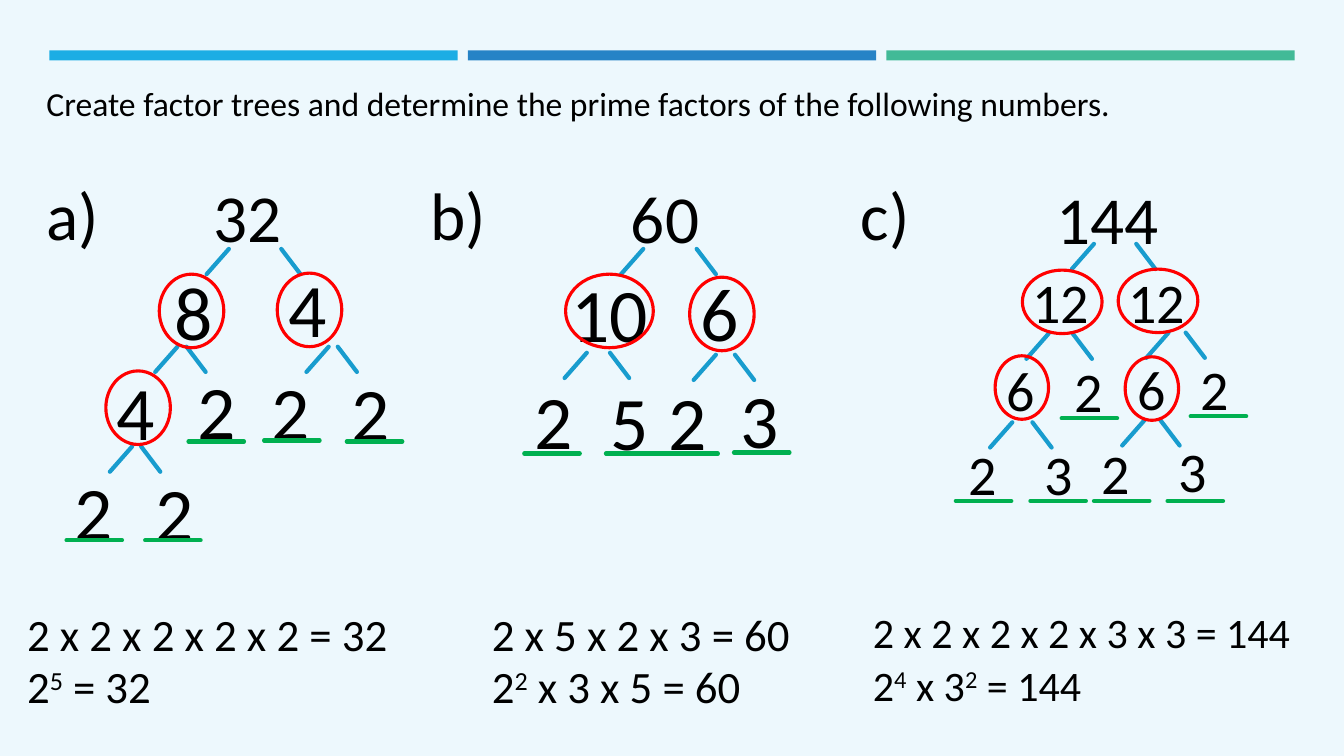
from dataclasses import dataclass
from typing import Optional

from lxml.etree import SubElement
from pptx import Presentation
from pptx.dml.color import RGBColor
from pptx.enum.shapes import MSO_CONNECTOR as CONN, MSO_SHAPE as SHAPE
from pptx.enum.text import MSO_ANCHOR as ANCHOR, PP_ALIGN as ALIGN
from pptx.oxml.ns import qn
from pptx.util import Inches, Pt


@dataclass(frozen=True)
class Theme:
    font: str = "Calibri"
    background: str = "EDF8FD"
    text: str = "000000"
    bars: tuple[str, ...] = ("1CADE4", "2683C6", "42BA97")
    branch: str = "189CCE"
    prime: str = "00B050"
    ring: str = "FF0000"
    title_pt: float = 24
    root_pt: float = 48
    line_pt: float = 3
    ring_pt: float = 2.25


@dataclass(frozen=True)
class Label:
    text: str
    x: float
    y: float


@dataclass(frozen=True)
class Fork:
    left: float
    right: float
    y: float


@dataclass(frozen=True)
class Composite:
    label: Label
    ring_x: float
    ring_y: float
    ring_w: Optional[float] = None


@dataclass(frozen=True)
class Prime:
    label: Label
    line_x: float
    line_y: float


@dataclass(frozen=True)
class Tree:
    """One exercise; '^' in the answers raises the digit after it."""
    letter: Label
    root: Label
    factor_pt: float
    ring_size: tuple[float, float]
    forks: tuple[Fork, ...]
    composites: tuple[Composite, ...]
    primes: tuple[Prime, ...]
    answer_x: float
    answer_pt: float
    answers: tuple[str, str]


THEME = Theme()
BRANCH_LEFT, BRANCH_RIGHT, BRANCH_DROP = 0.22, 0.19, 0.25
UNDERLINE_W = 0.55
ANSWER_Y, ANSWER_STEP = 5.97, 0.52

TREES = (
    Tree(
        Label("a)", 0.36, 1.67), Label("32", 2.02, 1.69), 54, (0.64, 0.73),
        (Fork(2.27, 2.79, 2.47), Fork(1.76, 1.85, 3.44),
         Fork(1.31, 1.4, 4.43), Fork(3.26, 3.35, 3.44)),
        (Composite(Label("8", 1.63, 2.58), 1.58, 2.72),
         Composite(Label("4", 2.76, 2.55), 2.75, 2.71),
         Composite(Label("4", 1.06, 3.57), 1.05, 3.68)),
        (Prime(Label("2", 1.86, 3.56), 1.87, 4.38),
         Prime(Label("2", 2.59, 3.57), 2.62, 4.37),
         Prime(Label("2", 3.39, 3.58), 3.44, 4.38),
         Prime(Label("2", 0.64, 4.56), 0.66, 5.36),
         Prime(Label("2", 1.44, 4.57), 1.44, 5.36)),
        0.17, 32, ("2 x 2 x 2 x 2 x 2 = 32", "2^5 = 32"),
    ),
    Tree(
        Label("b)", 4.17, 1.67), Label("60", 6.16, 1.7), 54, (0.64, 0.73),
        (Fork(6.38, 6.91, 2.47), Fork(5.82, 6.05, 3.5), Fork(7.1, 7.29, 3.52)),
        (Composite(Label("10", 5.57, 2.6), 5.61, 2.72, 0.87),
         Composite(Label("6", 6.85, 2.59), 6.84, 2.75)),
        (Prime(Label("2", 5.2, 3.66), 5.2, 4.5),
         Prime(Label("5", 5.96, 3.67), 6.01, 4.5),
         Prime(Label("2", 6.53, 3.67), 6.57, 4.5),
         Prime(Label("3", 7.25, 3.65), 7.28, 4.49)),
        4.78, 32, ("2 x 5 x 2 x 3 = 60", "2^2 x 3 x 5 = 60"),
    ),
    Tree(
        Label("c)", 8.44, 1.67), Label("144", 10.38, 1.71), 40, (0.53, 0.63),
        (Fork(10.85, 11.27, 2.42), Fork(10.4, 10.64, 3.31),
         Fork(10.04, 10.24, 4.19), Fork(11.59, 11.76, 3.3),
         Fork(11.35, 11.51, 4.17)),
        (Composite(Label("12", 10.14, 2.61), 10.14, 2.68, 0.79),
         Composite(Label("12", 11.09, 2.61), 11.09, 2.67, 0.79),
         Composite(Label("6", 9.88, 3.48), 9.87, 3.53),
         Composite(Label("6", 11.18, 3.47), 11.16, 3.54)),
        (Prime(Label("2", 10.56, 3.49), 10.53, 4.15),
         Prime(Label("2", 11.81, 3.47), 11.81, 4.13),
         Prime(Label("2", 9.51, 4.31), 9.48, 4.97),
         Prime(Label("3", 10.26, 4.31), 10.22, 4.97),
         Prime(Label("2", 10.83, 4.3), 10.85, 4.97),
         Prime(Label("3", 11.59, 4.28), 11.58, 4.97)),
        8.56, 30, ("2 x 2 x 2 x 2 x 3 x 3 = 144", "2^4 x 3^2 = 144"),
    ),
)


def rgb(value: str) -> RGBColor:
    return RGBColor.from_string(value)


def style_run(r, size: float) -> None:
    r.font.name = THEME.font
    r.font.size = Pt(size)
    r.font.color.rgb = rgb(THEME.text)


def add_label(s, label: Label, size: float, width: float = 1.09) -> None:
    height = 0.94 if size > THEME.root_pt else 0.86 if size == THEME.root_pt else 0.7
    box = s.shapes.add_textbox(Inches(label.x), Inches(label.y),
                               Inches(width), Inches(height))
    tf = box.text_frame
    tf.word_wrap = True
    p = tf.paragraphs[0]
    base, *powers = label.text.split("^")
    parts = [(base, False)]
    for power in powers:
        parts += [(power[0], True), (power[1:], False)]
    for text, raised in parts:
        r = p.add_run()
        r.text = text
        style_run(r, size)
        if raised:
            r._r.get_or_add_rPr().set("baseline", "30000")


def add_line(s, x1: float, y1: float, x2: float, y2: float, color: str) -> None:
    line = s.shapes.add_connector(CONN.STRAIGHT, Inches(x1), Inches(y1),
                                  Inches(x2), Inches(y2))
    line.line.color.rgb = rgb(color)
    line.line.width = Pt(THEME.line_pt)
    line.line._get_or_add_ln().set("cap", "rnd")
    SubElement(line._element.spPr, qn("a:effectLst"))


def add_ring(s, x: float, y: float, width: float, height: float) -> None:
    ring = s.shapes.add_shape(SHAPE.OVAL, Inches(x), Inches(y),
                              Inches(width), Inches(height))
    ring.shadow.inherit = False
    ring.fill.background()
    ring.line.color.rgb = rgb(THEME.ring)
    ring.line.width = Pt(THEME.ring_pt)


def add_tree(s, tree: Tree) -> None:
    add_label(s, tree.letter, THEME.root_pt)
    add_label(s, tree.root, THEME.root_pt, 1.75)
    for f in tree.forks:
        for x, dx in ((f.left, -BRANCH_LEFT), (f.right, BRANCH_RIGHT)):
            add_line(s, x, f.y, x + dx, f.y + BRANCH_DROP, THEME.branch)
    ring_w, ring_h = tree.ring_size
    for c in tree.composites:
        add_label(s, c.label, tree.factor_pt)
        add_ring(s, c.ring_x, c.ring_y, c.ring_w or ring_w, ring_h)
    for prime in tree.primes:
        add_label(s, prime.label, tree.factor_pt)
        add_line(s, prime.line_x, prime.line_y,
                 prime.line_x + UNDERLINE_W, prime.line_y, THEME.prime)
    for i, answer in enumerate(tree.answers):
        add_label(s, Label(answer, tree.answer_x, ANSWER_Y + i * ANSWER_STEP),
                  tree.answer_pt, 4.7)


def add_bars(s) -> None:
    for i, color in enumerate(THEME.bars):
        bar = s.shapes.add_shape(SHAPE.RECTANGLE, Inches(0.49 + 4.15 * i), Inches(0.5),
                                 Inches(4.05), Inches(0.1))
        bar.shadow.inherit = False
        bar.fill.solid()
        bar.fill.fore_color.rgb = rgb(color)
        bar.line.fill.background()


def set_title(s, text: str) -> None:
    title = s.shapes.title
    title.left, title.top = Inches(0.36), Inches(0.77)
    title.width, title.height = Inches(12.06), Inches(1.11)
    tf = title.text_frame
    tf.text = text
    tf.word_wrap = True
    tf.vertical_anchor = ANCHOR.TOP
    p = tf.paragraphs[0]
    p.alignment = ALIGN.LEFT
    style_run(p.runs[0], THEME.title_pt)


def main() -> None:
    prs = Presentation()
    prs.slide_width, prs.slide_height = Inches(13.33), Inches(7.5)
    s = prs.slides.add_slide(prs.slide_layouts[5])
    s.background.fill.solid()
    s.background.fill.fore_color.rgb = rgb(THEME.background)
    add_bars(s)
    set_title(s, "Create factor trees and determine the prime factors of the following numbers.")
    for tree in TREES:
        add_tree(s, tree)
    prs.save("out.pptx")


if __name__ == "__main__":
    main()
